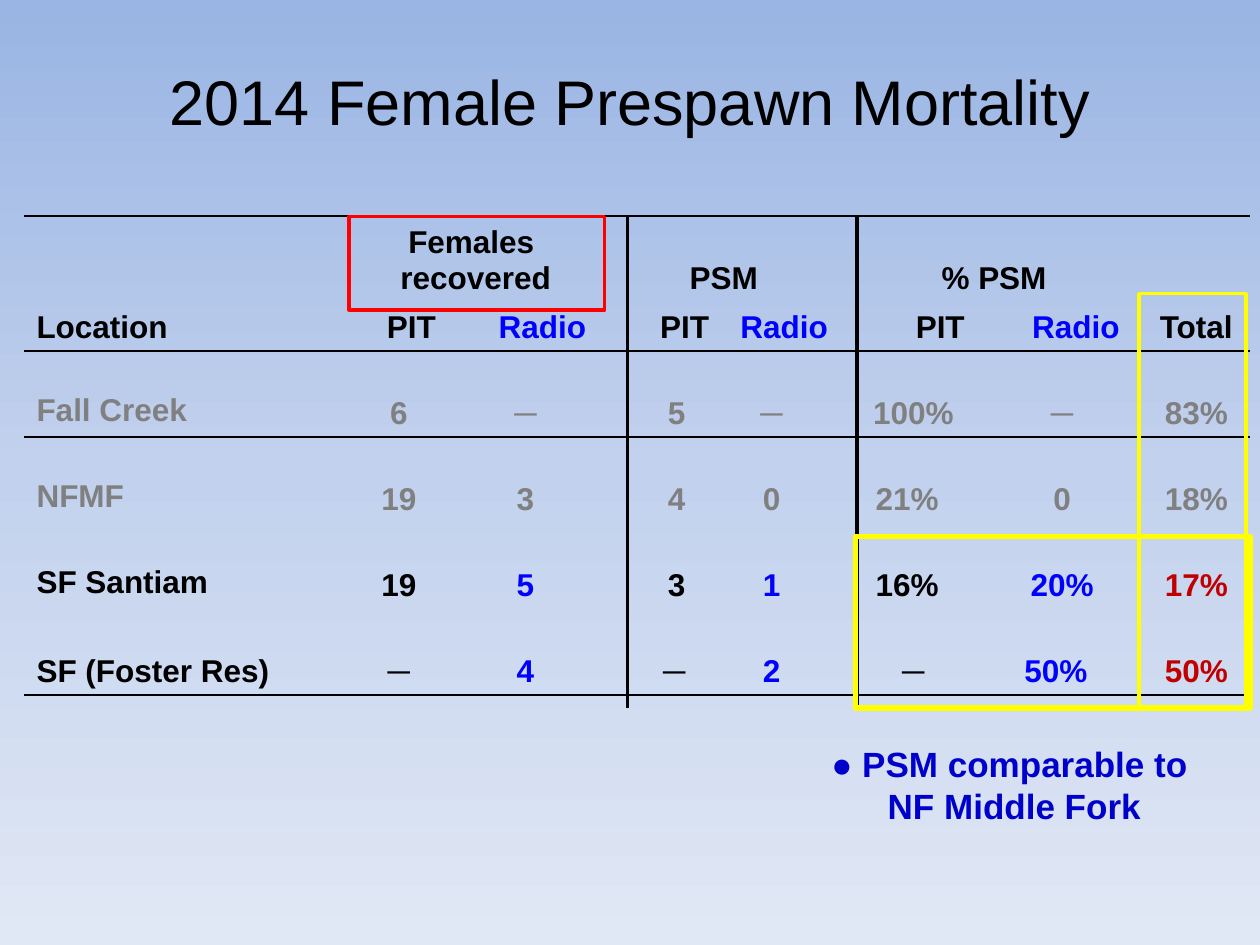
from copy import deepcopy
from dataclasses import dataclass

from lxml import etree
from pptx import Presentation
from pptx.dml.color import RGBColor
from pptx.enum.shapes import MSO_CONNECTOR, MSO_SHAPE
from pptx.enum.text import MSO_ANCHOR, MSO_AUTO_SIZE, PP_ALIGN
from pptx.oxml.ns import qn
from pptx.slide import Slide
from pptx.table import Table, _Cell
from pptx.text.text import TextFrame
from pptx.util import Pt

LEFT, CENTER, RIGHT = PP_ALIGN.LEFT, PP_ALIGN.CENTER, PP_ALIGN.RIGHT
BOTTOM = MSO_ANCHOR.BOTTOM
GROW = MSO_AUTO_SIZE.SHAPE_TO_FIT_TEXT
RECTANGLE = MSO_SHAPE.RECTANGLE
STRAIGHT = MSO_CONNECTOR.STRAIGHT

FONT = "Arial"
BLACK, GRAY, BLUE, RED = "000000", "808080", "0000FF", "C00000"
YELLOW, FRAME_RED, NOTE_BLUE = "FFFF00", "FF0000", "0000CC"
BACKGROUND = ((0, "9AB5E4"), (0.5, "C2D1ED"), (1, "E1E8F5"))

TABLE_LEFT, TABLE_TOP, RULE_BOTTOM = 13.7, 123.6, 404.6
COLUMN_WIDTHS = (185.8, 71.3, 73.4, 69.1, 69.8, 88.6, 81.4, 61.2)
ROW_HEIGHTS = (49.15, 28, 49.15, 49.15, 49.15, 49.15)
COLUMN_COLOURS = (BLACK, BLACK, BLUE, BLACK, BLUE, BLACK, BLUE, RED)
RIGHT_INSETS = (7.2, 21.6, 21.6, 21.6, 21.6, 18, 18, 0)
WIDE_INSET = 25.2
WIDE_INSET_CELLS = {(3, 5), (4, 5), (5, 6)}
GROUPS = {1: ("Females ", "recovered"), 3: ("PSM",), 5: ("% PSM",)}
HEADINGS = ("Location", "PIT", "Radio", "PIT", "Radio", "PIT", "Radio", "Total")
HEADING_INSETS = (7.2, 7.2, 12.2, 32.2, 7.2, 27.2, 12.2, 7.2)
RESULTS = (
    ("Fall Creek", "6", "─", "5", "─", "100%", "─", "83%"),
    ("NFMF", "19", "3", "4", "0", "21%", "0", "18%"),
    ("SF Santiam", "19", "5", "3", "1", "16%", "20%", "17%"),
    ("SF (Foster Res)", "─", "4", "─", "2", "─", "50%", "50%"),
)
FIRST_RESULT_ROW = 2
GRAY_ROWS = (2, 3)
TOP_RULES = {0: 1.5, 2: 1, 3: 1}
BOTTOM_RULES = {1: 1, 2: 1, 5: 1.5}


@dataclass(frozen=True)
class TextStyle:
    """Look of a block of text."""

    size: float
    colour: str
    bold: bool = True
    align: PP_ALIGN = CENTER


@dataclass(frozen=True)
class Frame:
    """Unfilled rectangle that highlights part of the table."""

    left: float
    top: float
    width: float
    height: float
    colour: str
    weight: float


@dataclass(frozen=True)
class Caption:
    """Free-standing text on the slide."""

    left: float
    top: float
    width: float
    height: float
    lines: tuple[str, ...]
    style: TextStyle


TITLE = Caption(0, 32.4, 720, 51.1, ("2014 Female Prespawn Mortality",),
                TextStyle(36, BLACK, bold=False))
NOTE = Caption(454.3, 420.5, 250.6, 55.4, ("● PSM comparable to ", "NF Middle Fork"),
               TextStyle(20, NOTE_BLUE))
TOTAL_FRAME = Frame(650.9, 167.8, 61.2, 236.9, YELLOW, 2)
SANTIAM_FRAME = Frame(488.9, 306.7, 225.4, 97.9, YELLOW, 3)
FEMALES_FRAME = Frame(199.4, 123.8, 146.2, 53.3, FRAME_RED, 2)


def colour_of(value: str) -> RGBColor:
    """Turn a hex string into a colour."""
    return RGBColor.from_string(value)


def write_lines(text_frame: TextFrame, lines: tuple[str, ...], style: TextStyle) -> None:
    """Write one paragraph with one run for each line."""
    for index, line in enumerate(lines):
        paragraph = text_frame.add_paragraph() if index else text_frame.paragraphs[0]
        paragraph.alignment = style.align
        run = paragraph.add_run()
        run.text = line
        run.font.name = FONT
        run.font.size = Pt(style.size)
        run.font.bold = style.bold
        run.font.color.rgb = colour_of(style.colour)


def paint_background(slide: Slide) -> None:
    """Give the slide a three-stop gradient from top to bottom."""
    fill = slide.background.fill
    fill.gradient()
    fill.gradient_angle = 270
    stop_list = slide.element.find(f".//{qn('a:gsLst')}")
    stop_list.insert(1, deepcopy(stop_list[0]))
    for stop, (position, colour) in zip(fill.gradient_stops, BACKGROUND):
        stop.position = position
        stop.color.rgb = colour_of(colour)


def add_caption(slide: Slide, caption: Caption) -> None:
    """Add a wrapped text box."""
    shape = slide.shapes.add_textbox(
        Pt(caption.left), Pt(caption.top), Pt(caption.width), Pt(caption.height))
    shape.text_frame.word_wrap = True
    shape.text_frame.auto_size = GROW
    write_lines(shape.text_frame, caption.lines, caption.style)


def add_frame(slide: Slide, frame: Frame) -> None:
    """Add a highlight rectangle."""
    shape = slide.shapes.add_shape(
        RECTANGLE, Pt(frame.left), Pt(frame.top), Pt(frame.width), Pt(frame.height))
    shape.shadow.inherit = False
    shape.fill.background()
    shape.line.color.rgb = colour_of(frame.colour)
    shape.line.width = Pt(frame.weight)


def add_divider(slide: Slide, x: float) -> None:
    """Add a vertical rule along the table."""
    connector = slide.shapes.add_connector(
        STRAIGHT, Pt(x), Pt(TABLE_TOP), Pt(x), Pt(RULE_BOTTOM))
    connector.line.color.rgb = colour_of(BLACK)
    connector.line.width = Pt(2)
    etree.SubElement(connector.element.spPr, qn("a:effectLst"))


def set_borders(cell: _Cell, top: float, bottom: float) -> None:
    """Draw the top and bottom borders with these weights and no others."""
    properties = cell._tc.get_or_add_tcPr()
    weights = {"a:lnL": 0, "a:lnR": 0, "a:lnT": top, "a:lnB": bottom}
    for index, (tag, weight) in enumerate(weights.items()):
        line = etree.Element(qn(tag), w=str(Pt(weight)))
        if weight:
            fill = etree.SubElement(line, qn("a:solidFill"))
            etree.SubElement(fill, qn("a:srgbClr"), val=BLACK)
        else:
            etree.SubElement(line, qn("a:noFill"))
        properties.insert(index, line)


def fill_headings(table: Table) -> None:
    """Write the two heading rows."""
    for column, lines in GROUPS.items():
        table.cell(0, column).merge(table.cell(0, column + 1))
        write_lines(table.cell(0, column).text_frame, lines, TextStyle(18, BLACK))
    for column, heading in enumerate(HEADINGS):
        cell = table.cell(1, column)
        cell.margin_left = Pt(HEADING_INSETS[column])
        colour = BLUE if heading == "Radio" else BLACK
        align = CENTER if column else LEFT
        write_lines(cell.text_frame, (heading,), TextStyle(18, colour, align=align))


def fill_results(table: Table) -> None:
    """Write one row for each location."""
    alignments = {0: LEFT, 3: RIGHT}
    for row, values in enumerate(RESULTS, FIRST_RESULT_ROW):
        for column, value in enumerate(values):
            cell = table.cell(row, column)
            wide = (row, column) in WIDE_INSET_CELLS
            cell.margin_right = Pt(WIDE_INSET if wide else RIGHT_INSETS[column])
            if column == len(values) - 1:
                cell.margin_left = Pt(0)
            if column == 0 and value != RESULTS[-1][0]:
                cell.margin_bottom = Pt(5.3)
            colour = GRAY if row in GRAY_ROWS else COLUMN_COLOURS[column]
            style = TextStyle(18, colour, align=alignments.get(column, CENTER))
            write_lines(cell.text_frame, (value,), style)


def add_mortality_table(slide: Slide) -> None:
    """Add the mortality table."""
    table = slide.shapes.add_table(
        len(ROW_HEIGHTS), len(COLUMN_WIDTHS), Pt(TABLE_LEFT), Pt(TABLE_TOP),
        Pt(sum(COLUMN_WIDTHS)), Pt(sum(ROW_HEIGHTS))).table
    table.first_row = table.horz_banding = False
    for column, width in zip(table.columns, COLUMN_WIDTHS):
        column.width = Pt(width)
    for index, (row, height) in enumerate(zip(table.rows, ROW_HEIGHTS)):
        row.height = Pt(height)
        for cell in row.cells:
            cell.fill.background()
            cell.vertical_anchor = BOTTOM
            cell.margin_top = cell.margin_bottom = Pt(3.6)
            set_borders(cell, TOP_RULES.get(index, 0), BOTTOM_RULES.get(index, 0))
    fill_headings(table)
    fill_results(table)


def main() -> None:
    """Build and save the presentation."""
    presentation = Presentation()
    presentation.slide_width, presentation.slide_height = Pt(720), Pt(540)
    slide = presentation.slides.add_slide(presentation.slide_layouts[6])
    paint_background(slide)
    add_divider(slide, 489.6)
    add_mortality_table(slide)
    add_caption(slide, TITLE)
    add_frame(slide, TOTAL_FRAME)
    add_frame(slide, SANTIAM_FRAME)
    add_divider(slide, 358.6)
    add_caption(slide, NOTE)
    add_frame(slide, FEMALES_FRAME)
    presentation.save("out.pptx")


if __name__ == "__main__":
    main()
